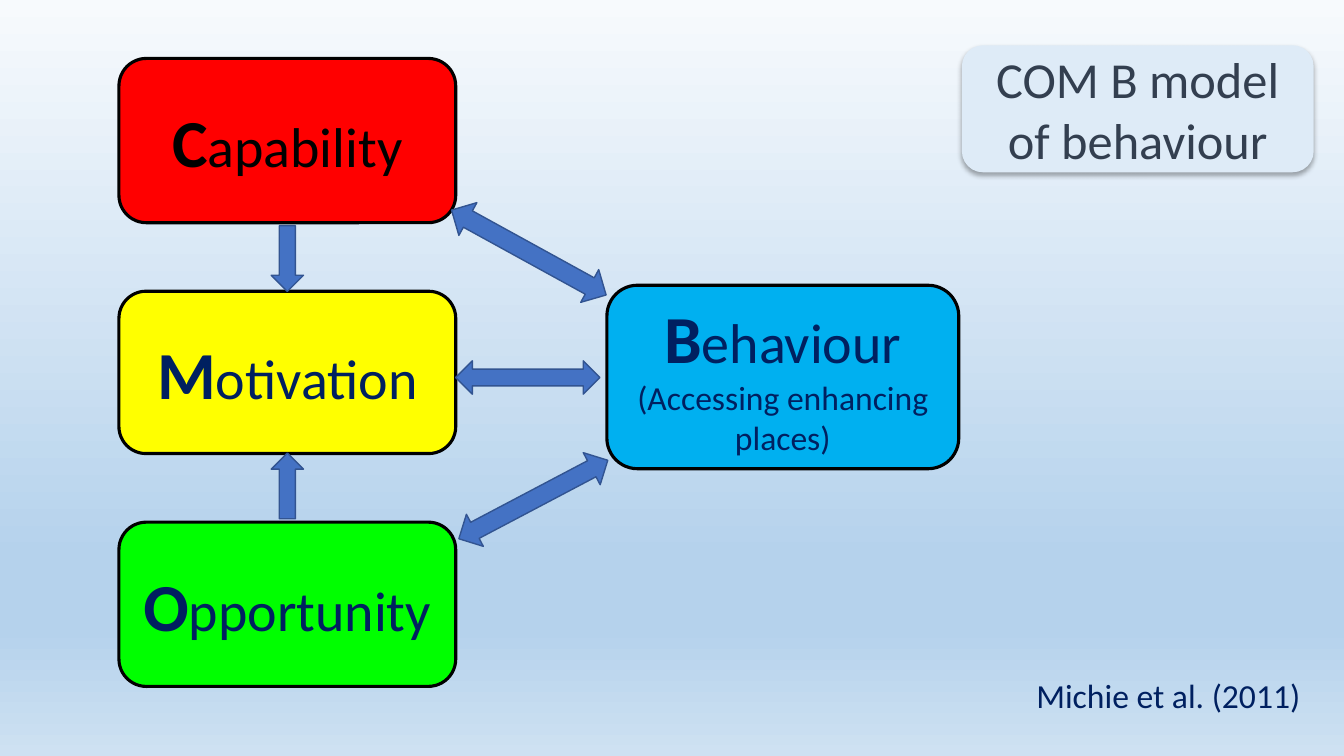
from lxml import etree
from pptx import Presentation, util as u
from pptx.dml.color import RGBColor
from pptx.enum import shapes, text
from pptx.oxml.ns import qn

WIDTH, HEIGHT = u.Inches(13.33), u.Inches(7.5)
NAVY, BLACK = "002060", "000000"
KIND = shapes.MSO_SHAPE
COLUMN_LEFT, COLUMN_WIDTH = 8.85, 25.06
COLUMN_MIDDLE = COLUMN_LEFT + COLUMN_WIDTH / 2


def across(share):
    return round(WIDTH * share / 100)


def down(share):
    return round(HEIGHT * share / 100)


def frame(left, top, width, height):
    return across(left), down(top), across(width), down(height)


def color(value):
    return RGBColor.from_string(value)


def add_color(parent, value):
    return etree.SubElement(parent, qn("a:srgbClr"), val=value)


def paint_background(page, stops):
    fill = page.background.fill
    fill.gradient()
    fill.gradient_angle = 270
    stop_list = next(page.background._cSld.iter(qn("a:gsLst")))
    for stop in list(stop_list):
        stop_list.remove(stop)
    for position, value in stops:
        stop = etree.SubElement(stop_list, qn("a:gs"), pos=str(position * 1000))
        add_color(stop, value)


def add_span(para, words, size, value, bold=False):
    span = para.add_run()
    span.text = words
    span.font.name = "Calibri"
    span.font.size = u.Pt(size)
    span.font.bold = bold
    span.font.color.rgb = color(value)


def add_preset(page, kind, place, fill, line=None, weight=1):
    shape = page.shapes.add_shape(kind, *place)
    shape.shadow.inherit = False
    shape.fill.solid()
    shape.fill.fore_color.rgb = color(fill)
    if line:
        shape.line.color.rgb = color(line)
        shape.line.width = u.Pt(weight)
    else:
        shape.line.fill.background()
    return shape


def center_text(shape):
    body = shape.text_frame
    body.word_wrap = True
    body.vertical_anchor = text.MSO_ANCHOR.MIDDLE
    body.paragraphs[0].alignment = text.PP_ALIGN.CENTER
    return body


def add_box(page, place, word, fill, ink=NAVY, detail=None):
    box = add_preset(page, KIND.ROUNDED_RECTANGLE, place, fill, BLACK, 2.25)
    body = center_text(box)
    para = body.paragraphs[0]
    add_span(para, word[0], 48, ink, True)
    add_span(para, word[1:], 40, ink)
    if detail:
        para = body.add_paragraph()
        para.alignment = text.PP_ALIGN.CENTER
        add_span(para, detail, 24, ink)


def add_arrow(page, kind, middle_x, middle_y, width, length, turn=0):
    place = frame(middle_x - width / 2, middle_y - length / 2, width, length)
    add_preset(page, kind, place, "4472C4", "325491").rotation = turn


def add_title(page, words):
    box = add_preset(page, KIND.ROUNDED_RECTANGLE, frame(71.57, 6, 26.18, 16.8), "DEEBF7")
    add_span(center_text(box).paragraphs[0], words, 36, "333F50")
    effects = box._element.spPr.find(qn("a:effectLst"))
    shadow = etree.SubElement(
        effects, qn("a:outerShdw"), blurRad=str(u.Pt(3.5)),
        dist=str(u.Pt(2.2)), dir="5400000", algn="t", rotWithShape="0")
    etree.SubElement(add_color(shadow, BLACK), qn("a:alpha"), val="32000")


def add_citation(page, words):
    box = page.shapes.add_textbox(*frame(76.37, 88.67, 21.98, 6.67))
    box.text_frame.word_wrap = True
    box.text_frame.auto_size = text.MSO_AUTO_SIZE.SHAPE_TO_FIT_TEXT
    add_span(box.text_frame.paragraphs[0], words, 24, NAVY)


def main():
    deck = Presentation()
    deck.slide_width, deck.slide_height = WIDTH, HEIGHT
    page = deck.slides.add_slide(deck.slide_layouts[6])
    paint_background(page, [(0, "F7FAFD"), (74, "B5D2EC"), (83, "B5D2EC"), (100, "CEE1F2")])

    for word, top, height, fill, ink in [
        ("Capability", 7.73, 21.73, "FF0000", BLACK),
        ("Opportunity", 69.07, 21.73, "00FF00", NAVY),
        ("Motivation", 38.53, 21.47, "FFFF00", NAVY),
    ]:
        add_box(page, frame(COLUMN_LEFT, top, COLUMN_WIDTH, height), word, fill, ink)
    add_box(page, frame(45.16, 37.73, 26.18, 24.27), "Behaviour", "00B0F0",
            detail="(Accessing enhancing places)")

    for middle_y, turn in [(34.2, 0), (64.27, 180)]:
        add_arrow(page, KIND.DOWN_ARROW, COLUMN_MIDDLE, middle_y, 2.4, 8.7, turn)
    for middle_x, middle_y, width, length, turn in [
        (39.35, 33.4, 2.78, 23.33, 298.8),
        (39.68, 66.07, 2.7, 22.27, 242.2),
        (39.27, 49.93, 2.48, 19.07, 270),
    ]:
        # placeholder
        add_arrow(page, KIND.UP_DOWN_ARROW, middle_x, middle_y, width, length, turn)

    add_title(page, "COM B model of behaviour")
    add_citation(page, "Michie et al. (2011)")
    deck.save("out.pptx")


if __name__ == "__main__":
    main()
